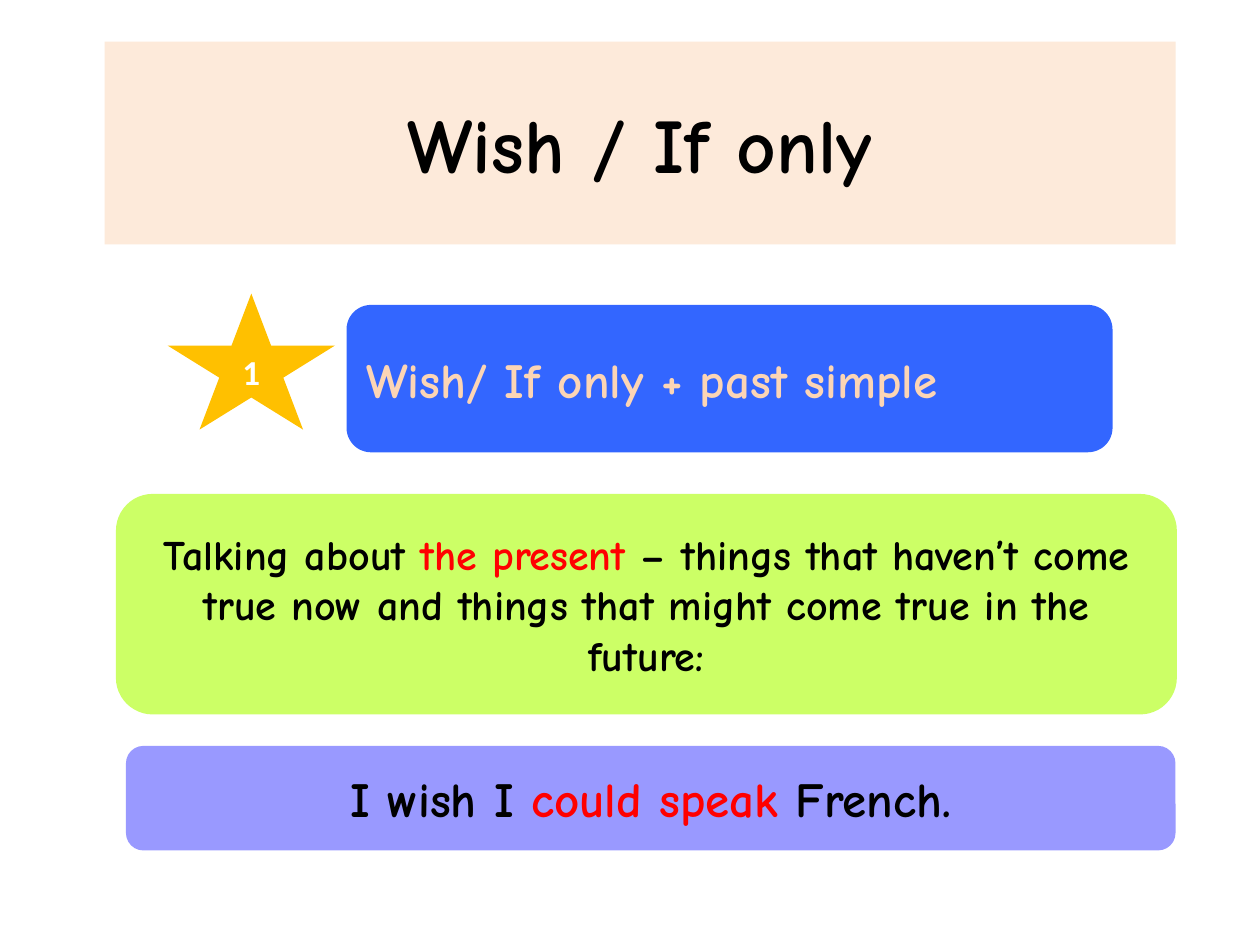
from dataclasses import dataclass
from pptx import Presentation
from pptx.dml.color import RGBColor as Rgb
from pptx.enum.shapes import MSO_SHAPE as Kind
from pptx.enum.text import MSO_ANCHOR as Anchor, PP_ALIGN as Align
from pptx.util import Inches, Pt


@dataclass(frozen=True)
class Theme:
    face: str = "Comic Neue"
    plain: str = "Calibri"
    ink: str = "000000"
    mark: str = "FF0000"
    white: str = "FFFFFF"
    sand: str = "FCD5B5"
    peach: str = "FDEADA"
    blue: str = "3366FF"
    gold: str = "FFC000"
    lime: str = "CCFF66"
    lilac: str = "9999FF"
    head: int = 44
    large: int = 28
    body: int = 24
    small: int = 20


class Deck:
    def __init__(self, theme):
        self.theme = theme
        self.file = Presentation()
        self.file.slide_width = Inches(10)
        self.file.slide_height = Inches(7.5)
        self.slide = self.file.slides.add_slide(self.file.slide_layouts[5])

    def paint(self, shape, fill):
        shape.fill.solid()
        shape.fill.fore_color.rgb = Rgb.from_string(fill)

    def label(self, shape, runs, size, align=Align.CENTER, face=None):
        frame = shape.text_frame
        for name, value in {"word_wrap": True, "vertical_anchor": Anchor.MIDDLE}.items():
            setattr(frame, name, value)
        para = frame.paragraphs[0]
        para.alignment = align
        style = {"name": face or self.theme.face, "size": Pt(size), "bold": True}
        for text, color in runs:
            run = para.add_run()
            run.text = text
            for name, value in style.items():
                setattr(run.font, name, value)
            run.font.color.rgb = Rgb.from_string(color)

    def title(self, text, box, fill):
        shape = self.slide.shapes.title
        for name, value in zip(("left", "top", "width", "height"), box):
            setattr(shape, name, Inches(value))
        self.paint(shape, fill)
        self.label(shape, [(text, self.theme.ink)], self.theme.head)

    def panel(self, kind, box, fill, runs, size, **style):
        shape = self.slide.shapes.add_shape(kind, *map(Inches, box))
        shape.shadow.inherit = False
        shape.line.fill.background()
        self.paint(shape, fill)
        self.label(shape, runs, size, **style)


def main():
    look = Theme()
    deck = Deck(look)
    deck.title("Wish / If only", (0.83, 0.33, 8.5, 1.61), look.peach)
    deck.panel(Kind.ROUNDED_RECTANGLE, (2.75, 2.42, 6.08, 1.17), look.blue,
               [("Wish/ If only + past simple", look.sand)], look.large, align=Align.LEFT)
    deck.panel(Kind.STAR_5_POINT, (1.33, 2.33, 1.33, 1.08), look.gold,
               [("1", look.white)], look.small, face=look.plain)
    deck.panel(Kind.ROUNDED_RECTANGLE, (0.92, 3.92, 8.42, 1.75), look.lime, [
        ("Talking about ", look.ink),
        ("the present ", look.mark),
        ("– things that haven’t come true now and things that might come true in the future:", look.ink),
    ], look.body)
    deck.panel(Kind.ROUNDED_RECTANGLE, (1, 5.92, 8.33, 0.83), look.lilac, [
        ("I wish I ", look.ink),
        ("could speak ", look.mark),
        ("French.", look.ink),
    ], look.large)
    deck.file.save("out.pptx")


if __name__ == "__main__":
    main()
